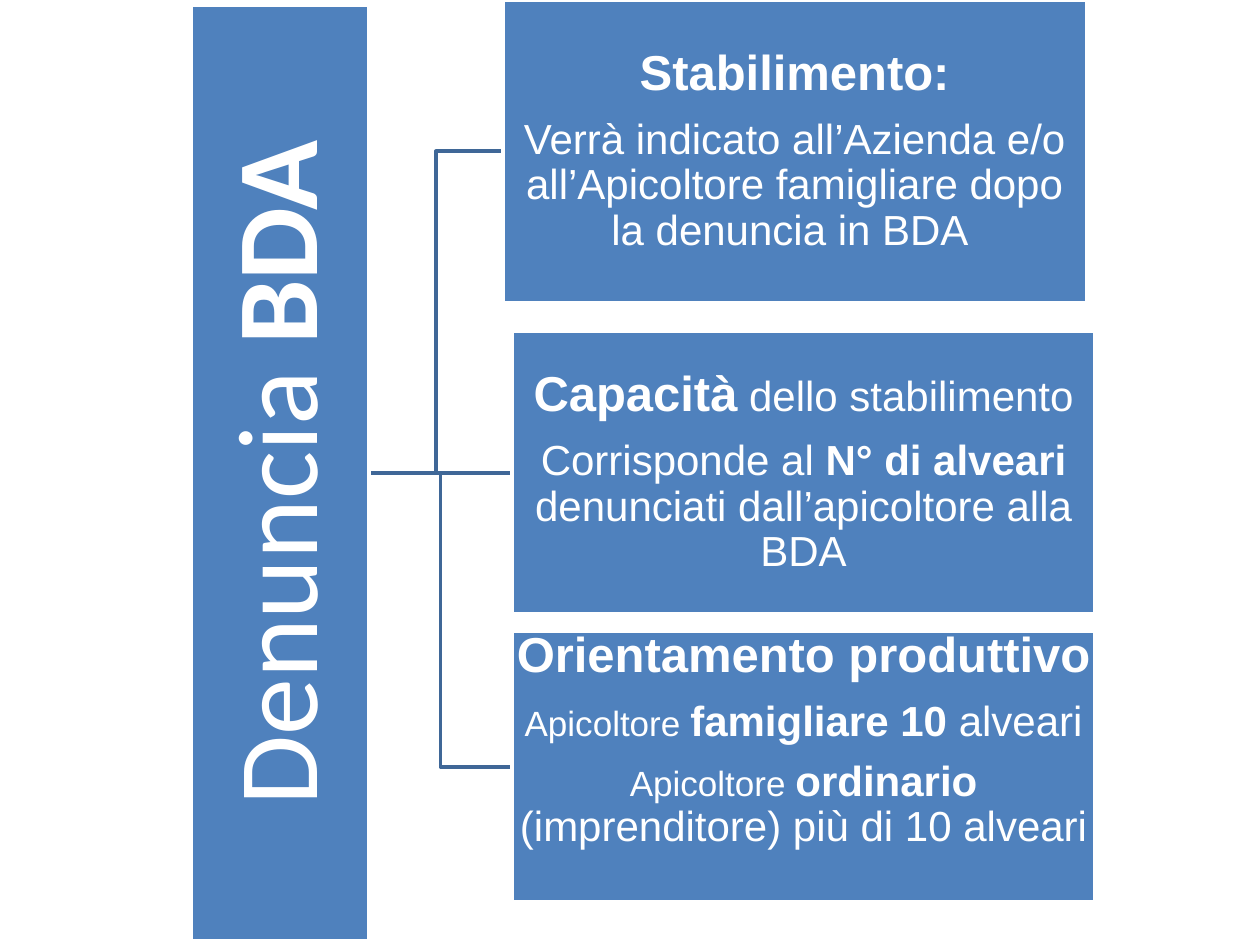
from lxml import etree
from pptx import Presentation, util as u
from pptx.dml.color import RGBColor
from pptx.enum import shapes, text
from pptx.oxml.ns import qn

BLUE, LINK, WHITE = "4F81BD", "3F6797", "FFFFFF"


def paint(color_format, hex_color):
    color_format.rgb = RGBColor.from_string(hex_color)


def add_block(left, top, width, height, inset, font, paragraphs):
    """Add a blue rectangle; paragraphs hold (text, size, bold) runs."""
    block = slide.shapes.add_shape(
        shapes.MSO_SHAPE.RECTANGLE, u.Cm(left), u.Cm(top), u.Cm(width), u.Cm(height))
    block.shadow.inherit = False
    block.fill.solid()
    paint(block.fill.fore_color, BLUE)
    paint(block.line.color, WHITE)
    block.line.width = u.Pt(2)
    frame = block.text_frame
    frame_format = {"word_wrap": True, "vertical_anchor": text.MSO_ANCHOR.MIDDLE}
    for side in ("left", "top", "right", "bottom"):
        frame_format[f"margin_{side}"] = u.Cm(inset)
    for name, value in frame_format.items():
        setattr(frame, name, value)
    for i, runs in enumerate(paragraphs):
        paragraph = frame.paragraphs[0] if i == 0 else frame.add_paragraph()
        paragraph.alignment = text.PP_ALIGN.CENTER
        paragraph.line_spacing = 0.9
        paragraph.space_after = u.Pt(round(0.35 * max(size for _, size, _ in runs), 1))
        for words, size, bold in runs:
            run = paragraph.add_run()
            run.text = words
            for name, value in {"name": font, "size": u.Pt(size), "bold": bold}.items():
                setattr(run.font, name, value)
            paint(run.font.color, WHITE)
    return block


prs = Presentation()
prs.slide_width, prs.slide_height = u.Cm(25.4), u.Cm(19.05)
slide = prs.slides.add_slide(prs.slide_layouts[6])

# Left, top and height of each branch, then its paragraphs
branch_width = 11.76
branches = [
    (10.14, 0, 6.1, [
        [("Stabilimento:", 28, True)],
        [("Verrà indicato all’Azienda e/o all’Apicoltore famigliare dopo "
          "la denuncia in BDA ", 24, False)],
    ]),
    (10.32, 6.68, 5.69, [
        [("Capacità", 28, True), (" dello stabilimento", 24, False)],
        [("Corrisponde al ", 24, False), ("N° di alveari ", 24, True),
         ("denunciati dall’apicoltore alla BDA", 24, False)],
    ]),
    (10.32, 12.73, 5.46, [
        [("Orientamento produttivo", 28, True)],
        [("Apicoltore ", 20, False), ("famigliare 10 ", 24, True), ("alveari", 24, False)],
        [("Apicoltore ", 20, False), ("ordinario ", 24, True),
         ("(imprenditore) più di 10 alveari", 24, False)],
    ]),
]

# Links from the root to the middle of each branch
root_right, root_middle = 7.44, 9.53
for left, top, height, _ in branches:
    middle = top + height / 2
    level = abs(middle - root_middle) < 0.1
    kind = shapes.MSO_CONNECTOR.STRAIGHT if level else shapes.MSO_CONNECTOR.ELBOW
    link = slide.shapes.add_connector(
        kind, u.Cm(root_right), u.Cm(root_middle),
        u.Cm(left), u.Cm(root_middle if level else middle))
    paint(link.line.color, LINK)
    link.line.width = u.Pt(2)
    etree.SubElement(link._element.spPr, qn("a:effectLst"))

# Root, turned to read upwards
root_length, root_thickness = 18.87, 3.58
root = add_block(root_right - (root_thickness + root_length) / 2,
                 root_middle - root_thickness / 2, root_length, root_thickness,
                 0.13, "Calibri", [[("Denuncia ", 65, False), ("BDA", 66, True)]])
root.rotation = 270

for left, top, height, paragraphs in branches:
    branch = add_block(left, top, branch_width, height, 0.05, "Arial", paragraphs)
# The last branch keeps its text at the top
branch.text_frame.margin_bottom = u.Cm(1.12)

prs.save("out.pptx")
